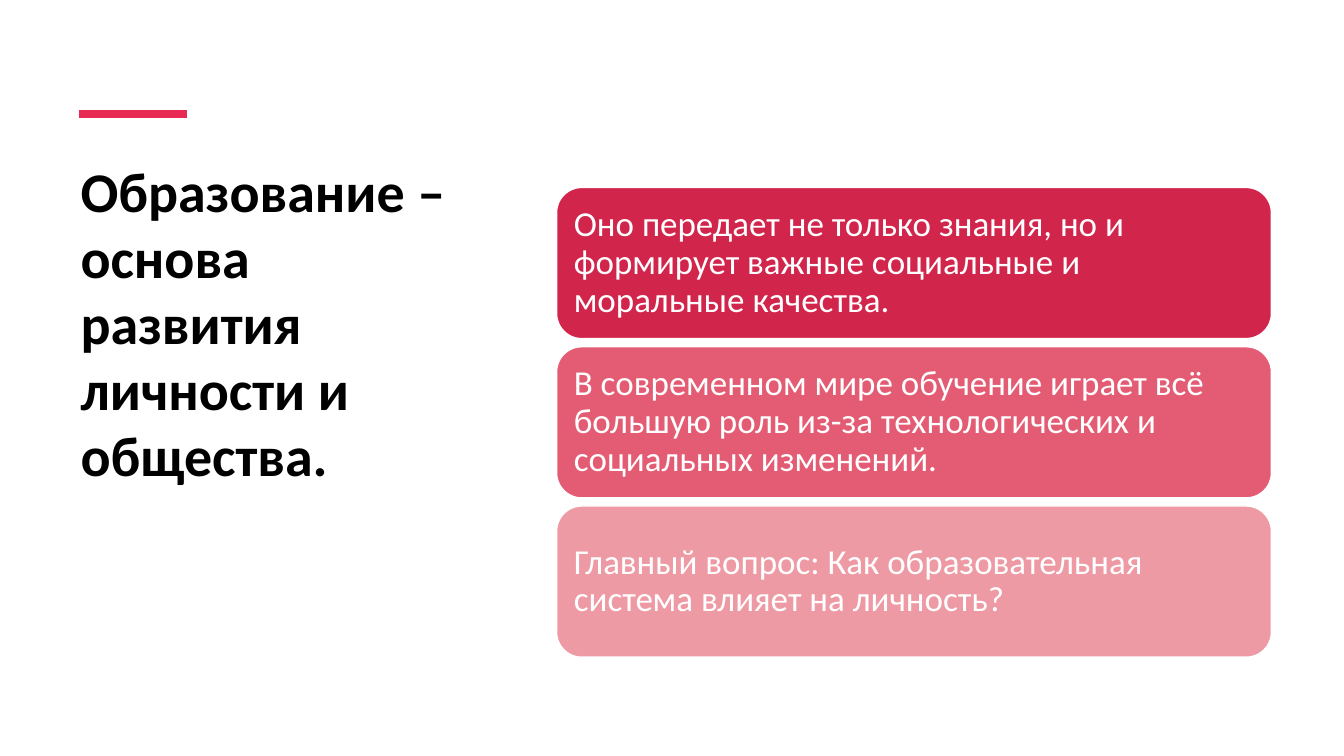
import pptx
import pptx.util
import pptx.dml.color
import pptx.enum.shapes
import pptx.enum.text
import lxml.etree

Inches = pptx.util.Inches
Pt = pptx.util.Pt
RGBColor = pptx.dml.color.RGBColor

BLACK = RGBColor(0x00, 0x00, 0x00)
WHITE = RGBColor(0xFF, 0xFF, 0xFF)
ACCENT = RGBColor(0xE7, 0x29, 0x54)
CRIMSON = RGBColor(0xD2, 0x25, 0x4C)
ROSE = RGBColor(0xE3, 0x5C, 0x73)
PINK = RGBColor(0xEE, 0x9A, 0xA4)


def put_text(sp, text, size, color, bold=False, spacing=1.0, inset=0.1,
             anchor=pptx.enum.text.MSO_ANCHOR.TOP):
    tf = sp.text_frame
    tf.word_wrap = True
    tf.vertical_anchor = anchor
    tf.margin_left = tf.margin_right = Inches(inset)
    p = tf.paragraphs[0]
    p.alignment = pptx.enum.text.PP_ALIGN.LEFT
    p.line_spacing = spacing
    r = p.add_run()
    r.text = text
    r.font.name = "Calibri"
    r.font.size = Pt(size)
    r.font.bold = bold
    r.font.color.rgb = color


prs = pptx.Presentation()
prs.slide_width = Inches(13.33)
prs.slide_height = Inches(7.5)
s = prs.slides.add_slide(prs.slide_layouts[6])

title = s.shapes.add_textbox(Inches(0.7), Inches(1.54), Inches(4.02), Inches(4.29))
put_text(title, "Образование – основа развития личности и общества.",
         size=40, color=BLACK, bold=True, spacing=0.98)

rule = s.shapes.add_connector(pptx.enum.shapes.MSO_CONNECTOR.STRAIGHT,
                              Inches(0.78), Inches(1.13), Inches(1.85), Inches(1.13))
rule.line.color.rgb = ACCENT
rule.line.width = Pt(6)
lxml.etree.SubElement(rule.element.spPr, pptx.oxml.ns.qn("a:effectLst"))

cards = [
    ("Оно передает не только знания, но и формирует важные социальные и моральные качества.", CRIMSON),
    ("В современном мире обучение играет всё большую роль из-за технологических и социальных изменений.", ROSE),
    ("Главный вопрос: Как образовательная система влияет на личность?", PINK),
]
for i, (text, fill) in enumerate(cards):
    card = s.shapes.add_shape(pptx.enum.shapes.MSO_SHAPE.ROUNDED_RECTANGLE,
                              Inches(5.52), Inches(1.86 + 1.58 * i), Inches(7.09), Inches(1.5))
    card.shadow.inherit = False
    card.fill.solid()
    card.fill.fore_color.rgb = fill
    card.line.color.rgb = WHITE
    card.line.width = Pt(1)
    put_text(card, text, size=25, color=WHITE, spacing=0.9, inset=0.1,
             anchor=pptx.enum.text.MSO_ANCHOR.MIDDLE)

prs.save("out.pptx")
